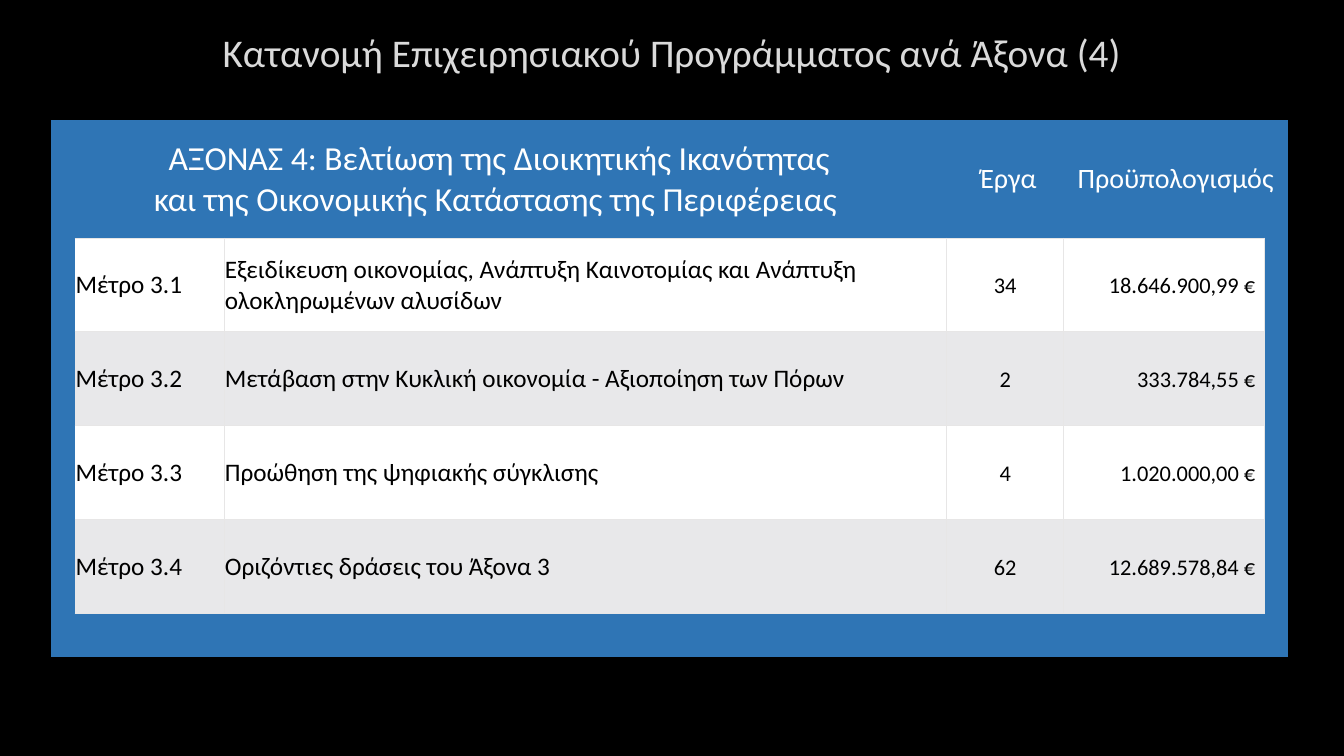
import pptx
import pptx.dml.color
import pptx.enum.text
import pptx.oxml
import pptx.oxml.ns
import pptx.util

Color = pptx.dml.color.RGBColor
Align = pptx.enum.text.PP_ALIGN
Anchor = pptx.enum.text.MSO_ANCHOR

BLACK = Color(0x00, 0x00, 0x00)
WHITE = Color(0xFF, 0xFF, 0xFF)
BLUE = Color(0x2F, 0x75, 0xB5)
BAND = Color(0xE8, 0xE8, 0xEA)
RULE = Color(0xE7, 0xE6, 0xE6)
SILVER = Color(0xDA, 0xDA, 0xDA)

TITLE = "Κατανομή Επιχειρησιακού Προγράμματος ανά Άξονα (4)"
AXIS = ("ΑΞΟΝΑΣ 4: Βελτίωση της Διοικητικής Ικανότητας\v"
        "και της Οικονομικής Κατάστασης της Περιφέρειας ")
HEADS = [(0, 2, AXIS, 24), (3, 3, " Έργα", 20),
         (4, 5, " Προϋπολογισμός ", 20)]
ROWS = [
    ("Μέτρο 3.1", "Εξειδίκευση οικονομίας, Ανάπτυξη Καινοτομίας και "
     "Ανάπτυξη ολοκληρωμένων αλυσίδων", "34", "18.646.900,99 €"),
    ("Μέτρο 3.2", "Μετάβαση στην Κυκλική οικονομία - Αξιοποίηση των Πόρων",
     "2", "333.784,55 €"),
    ("Μέτρο 3.3", "Προώθηση της ψηφιακής σύγκλισης", "4", "1.020.000,00 €"),
    ("Μέτρο 3.4", "Οριζόντιες δράσεις του Άξονα 3", "62", "12.689.578,84 €"),
]
ALIGNS = [Align.LEFT, Align.LEFT, Align.CENTER, Align.RIGHT]
WIDTHS = [1.73, 11.1, 53.79, 8.7, 14.93, 1.73]
HEIGHTS = [15.6] + [12.4] * len(ROWS) + [5.87]


class Deck:
    font = "Calibri"

    def __init__(self, width, height):
        self.show = pptx.Presentation()
        self.show.slide_width = pptx.util.Inches(width)
        self.show.slide_height = pptx.util.Inches(height)
        self.slide = self.show.slides.add_slide(self.show.slide_layouts[6])
        fill = self.slide.background.fill
        fill.solid()
        fill.fore_color.rgb = BLACK

    def across(self, share):
        return round(self.show.slide_width * share / 100)

    def down(self, share):
        return round(self.show.slide_height * share / 100)

    def label(self, frame, text, size, color, align):
        frame.text = text
        frame.word_wrap = True
        for par in frame.paragraphs:
            par.alignment = align
            for run in par.runs:
                run.font.name = self.font
                run.font.size = pptx.util.Pt(size)
                run.font.color.rgb = color

    def title(self, text, left, top, width, height):
        box = self.slide.shapes.add_textbox(
            self.across(left), self.down(top),
            self.across(width), self.down(height))
        box.text_frame.vertical_anchor = Anchor.MIDDLE
        self.label(box.text_frame, text, 28, SILVER, Align.CENTER)

    def table(self, left, top, widths, heights):
        frame = self.slide.shapes.add_table(
            len(heights), len(widths), self.across(left), self.down(top),
            self.across(sum(widths)), self.down(sum(heights)))
        table = frame.table
        table.first_row = table.horz_banding = False
        for col, width in zip(table.columns, widths):
            col.width = self.across(width)
        for row, height in zip(table.rows, heights):
            row.height = self.down(height)
        for cell in table.iter_cells():
            self.paint(cell, BLUE)
        return table

    def paint(self, cell, color):
        cell.fill.solid()
        cell.fill.fore_color.rgb = color
        cell.vertical_anchor = Anchor.MIDDLE
        self.pad(cell, 0.01)

    def pad(self, cell, side):
        cell.margin_left = cell.margin_right = pptx.util.Inches(side)
        cell.margin_top = pptx.util.Inches(0.01)
        cell.margin_bottom = 0

    def edge(self, cell, sides):
        props = cell._tc.get_or_add_tcPr()
        for place, side in enumerate("LRTB"):
            ink = (f'<a:solidFill><a:srgbClr val="{RULE}"/></a:solidFill>'
                   if side in sides else "<a:noFill/>")
            line = pptx.oxml.parse_xml(
                f'<a:ln{side} {pptx.oxml.ns.nsdecls("a")} '
                f'w="{pptx.util.Pt(0.5)}">{ink}</a:ln{side}>')
            props.insert(place, line)

    def save(self):
        self.show.save("out.pptx")


def main():
    deck = Deck(13.33, 7.5)
    table = deck.table(3.83, 15.87, WIDTHS, HEIGHTS)
    for first, last, text, size in HEADS:
        head = table.cell(0, first)
        if last > first:
            head.merge(table.cell(0, last))
        deck.label(head.text_frame, text, size, WHITE, Align.CENTER)

    for row, texts in enumerate(ROWS, 1):
        for col, (text, align) in enumerate(zip(texts, ALIGNS), 1):
            cell = table.cell(row, col)
            deck.paint(cell, WHITE if row % 2 else BAND)
            figure = col > 2
            deck.label(cell.text_frame, text, 16 if figure else 18,
                       BLACK, align)
            if figure:
                deck.pad(cell, 0.09)
                par = cell.text_frame.paragraphs[0]
                par.line_spacing = 1.07
                par.space_after = pptx.util.Pt(8)

    end = len(ROWS) + 1
    for row in range(end + 1):
        for col in range(len(WIDTHS)):
            if row == 0:
                sides = "B" if col > 2 else ""
            elif row == end:
                sides = "T" if 0 < col < 5 else ""
            else:
                sides = ["", "RTB", "LRTB", "LRTB", "LRTB", "L"][col]
            deck.edge(table.cell(row, col), sides)

    deck.title(TITLE, 7.5, 2.13, 84.92, 9.47)
    deck.save()


if __name__ == "__main__":
    main()
